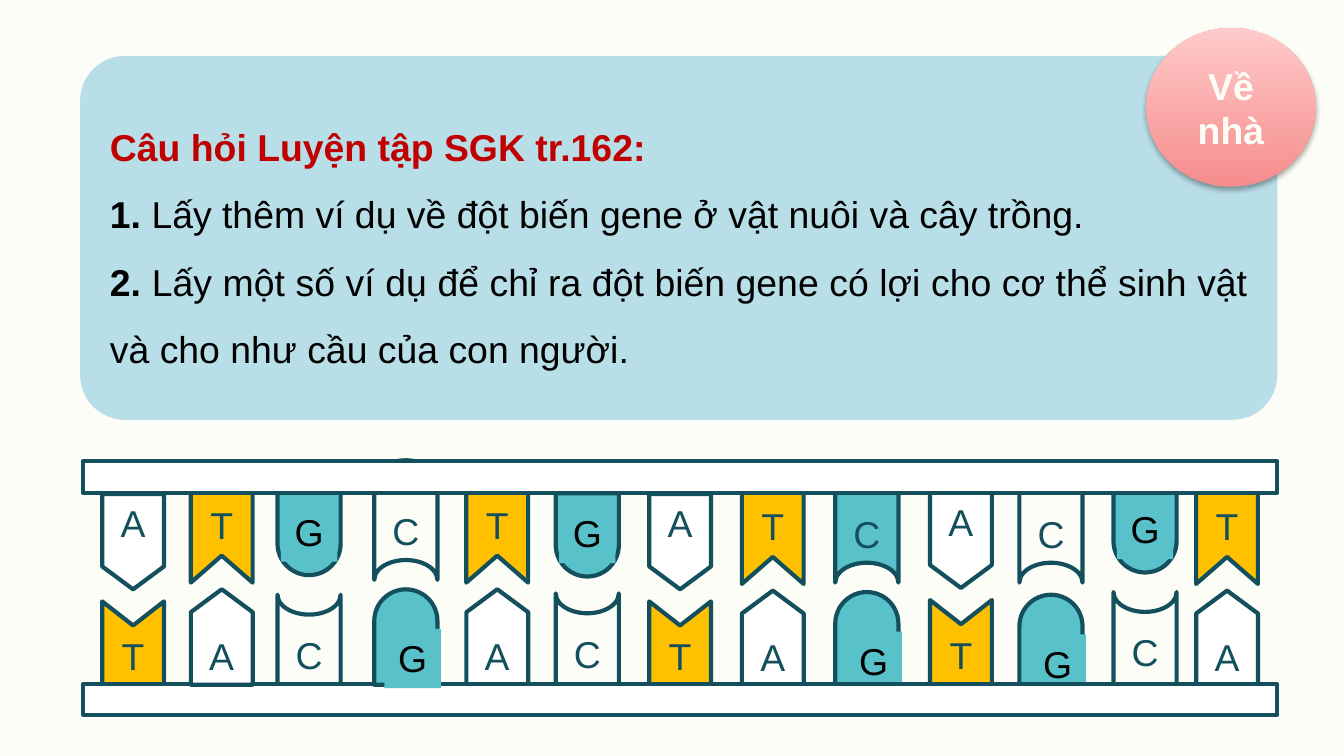
from lxml import etree
from pptx import Presentation
from pptx.dml.color import RGBColor
from pptx.enum.shapes import MSO_SHAPE as Preset
from pptx.enum.text import MSO_ANCHOR as Anchor, MSO_AUTO_SIZE as AutoSize, PP_ALIGN as Align
from pptx.oxml.ns import nsdecls
from pptx.util import Inches, Pt

COLORS = {
    "page": "FDFDF8", "panel": "B8DEE8", "heading": "C00000", "black": "000000",
    "outline": "134F5C", "white": "FFFFFF", "amber": "FFC000", "teal": "59C1C9",
    "badge_bottom": "F68D8D", "badge_top": "FFCACA",
}
PLATE, CHEVRON = Preset.PENTAGON, Preset.CHEVRON
CUP, ARCH = Preset.FLOWCHART_STORED_DATA, Preset.ROUND_2_SAME_RECTANGLE
TOP_BASES = {
    "A": dict(kind=PLATE, size=(0.71, 0.46), fill="white", adjust=(0.37,), turn=90,
              vert="vert270", anchor=Anchor.TOP),
    "T": dict(kind=CHEVRON, size=(0.87, 0.46), fill="amber", adjust=(0.437,), turn=270,
              vert="vert", anchor=Anchor.MIDDLE),
    "C": dict(kind=CUP, size=(0.89, 0.47), fill="page", turn=90, flip=True,
              vert="vert", anchor=Anchor.BOTTOM),
    "G": dict(kind=ARCH, size=(0.47, 0.62), fill="teal", adjust=(0.5, 0), flip=True,
              tag=(0, -0.01)),
}
BOTTOM_BASES = {
    "A": dict(kind=PLATE, size=(0.71, 0.46), fill="white", adjust=(0.37,), turn=270, flip=True,
              vert="vert270", anchor=Anchor.BOTTOM),
    "T": dict(kind=CHEVRON, size=(0.81, 0.46), fill="amber", adjust=(0.39,), turn=90,
              vert="vert270", anchor=Anchor.MIDDLE),
    "C": dict(kind=CUP, size=(0.89, 0.47), fill="page", turn=270,
              vert="vert", anchor=Anchor.MIDDLE),
    "G": dict(kind=ARCH, size=(0.47, 0.71), fill="teal", adjust=(0.5, 0), tag=(0.05, 0.16)),
}
COLUMNS = (0.37, 1.03, 1.68, 2.4, 3.08, 3.75, 4.44, 5.13, 5.83, 6.53, 7.2, 7.9, 8.51)


def rgb(name):
    """Return the named colour."""
    return RGBColor.from_string(COLORS[name])


def add_box(shapes, kind, box, fill, line=None, width=2.25, adjust=()):
    """Add a flat preset shape in a box of left, top, width and height."""
    shape = shapes.add_shape(kind, *map(Inches, box))
    shape.shadow.inherit = False
    shape.fill.solid()
    shape.fill.fore_color.rgb = rgb(fill)
    if line:
        shape.line.color.rgb = rgb(line)
        shape.line.width = Pt(width)
    else:
        shape.line.fill.background()
    for index, value in enumerate(adjust):
        shape.adjustments[index] = value
    return shape


def set_font(font, color, bold=False):
    """Apply the slide's typeface with a colour and weight."""
    font.name, font.size, font.bold = "Arial", Pt(20), bold
    font.color.rgb = rgb(color)


def write_label(shape, text, color, anchor, bold=False, wrap=True):
    """Write one centred label in a shape."""
    frame = shape.text_frame
    frame.word_wrap, frame.vertical_anchor = wrap, anchor
    para = frame.paragraphs[0]
    para.text, para.alignment = text, Align.CENTER
    set_font(para.font, color, bold)


def add_base(shapes, letter, center, kind, size, fill, adjust=(), turn=0, flip=False,
             vert=None, anchor=None, tag=None):
    """Draw a nucleotide around its centre, with its letter inside or on a tag."""
    (x, y), (width, height) = center, size
    shape = add_box(shapes, kind, (x - width / 2, y - height / 2, width, height),
                    fill, "outline", adjust=adjust)
    shape.rotation = turn
    if flip:
        shape._element.spPr.get_or_add_xfrm().set("flipV", "1")
    if tag:
        label = add_box(shapes, Preset.RECTANGLE,
                        (x + tag[0] - 0.21, y + tag[1] - 0.22, 0.42, 0.44), fill)
        write_label(label, letter, "black", Anchor.TOP, wrap=False)
        label.text_frame.auto_size = AutoSize.SHAPE_TO_FIT_TEXT
    else:
        write_label(shape, letter, "outline", anchor)
        shape.text_frame._txBody.bodyPr.set("vert", vert)


def add_strand(page, box, rail, sequence, drops, styles, tinted=(), raised=()):
    """Draw a strand in its box: a rail given as top and height, and its bases."""
    left, top, width, _ = box
    shapes = page.shapes.add_group_shape().shapes

    def draw(column):
        """Draw the base of one column."""
        letter = sequence[column]
        style = dict(styles[letter])
        if column in tinted:
            style["fill"] = "teal"
        add_base(shapes, letter, (left + COLUMNS[column], top + drops[column]), **style)

    for column in range(len(sequence)):
        if column not in raised:
            draw(column)
    add_box(shapes, Preset.RECTANGLE, (left, top + rail[0], width, rail[1]), "white", "outline")
    for column in raised:
        draw(column)


def add_question(page, box):
    """Draw the rounded panel with the heading and the two questions."""
    left, top, width, height = box
    shapes = page.shapes.add_group_shape().shapes
    add_box(shapes, Preset.ROUNDED_RECTANGLE, box, "panel", "panel", 2, (0.119,))
    text_box = shapes.add_textbox(*map(Inches, (left + 0.11, top + 0.28, width - 0.21, height - 0.56)))
    frame = text_box.text_frame
    frame.word_wrap, frame.auto_size = True, AutoSize.SHAPE_TO_FIT_TEXT
    lines = (
        (("Câu hỏi Luyện tập SGK tr.162:", "heading", True),),
        (("1. ", "black", True),
         ("Lấy thêm ví dụ về đột biến gene ở vật nuôi và cây trồng.", "black", False)),
        (("2. ", "black", True),
         ("Lấy một số ví dụ để chỉ ra đột biến gene có lợi cho cơ thể sinh vật "
          "và cho như cầu của con người.", "black", False)),
    )
    for index, spans in enumerate(lines):
        para = frame.add_paragraph() if index else frame.paragraphs[0]
        para.alignment, para.line_spacing = Align.JUSTIFY, 1.5
        for text, color, bold in spans:
            span = para.add_run()
            span.text = text
            set_font(span.font, color, bold)


def add_badge(page, box):
    """Draw the shaded homework badge."""
    badge = add_box(page.shapes, Preset.OVAL, box, "badge_top")
    badge.fill.gradient()
    badge.fill.gradient_angle = 90
    for stop, position, color in zip(badge.fill.gradient_stops, (0, 1), ("badge_bottom", "badge_top")):
        stop.position, stop.color.rgb = position, rgb(color)
    effects = badge._element.spPr.find("{*}effectLst")
    effects.append(etree.fromstring(
        f'<a:outerShdw {nsdecls("a")} blurRad="{Pt(3.1)}" dist="{Pt(1.8)}" dir="5400000" '
        f'rotWithShape="0"><a:srgbClr val="{COLORS["black"]}"><a:alpha val="35000"/>'
        '</a:srgbClr></a:outerShdw>'))
    write_label(badge, "Về nhà", "page", Anchor.MIDDLE, bold=True)


def main():
    """Build and save the slide."""
    deck = Presentation()
    deck.slide_width = Inches(10)
    deck.slide_height = deck.slide_width * 9 // 16
    page = deck.slides.add_slide(deck.slide_layouts[6])
    page.background.fill.solid()
    page.background.fill.fore_color.rgb = rgb("page")
    add_question(page, (0.61, 0.43, 8.88, 2.68))
    add_strand(page, (0.62, 3.43, 8.88, 0.95), (0, 0.24), "ATGCTGATCACGT",
               (0.6, 0.47, 0.54, 0.44, 0.47, 0.55, 0.6, 0.48, 0.46, 0.59, 0.46, 0.52, 0.48),
               TOP_BASES, tinted=(8,))
    add_strand(page, (0.62, 4.38, 8.88, 0.94), (0.71, 0.23), "TACGACTAGTGCA",
               (0.5, 0.36, 0.49, 0.36, 0.36, 0.48, 0.5, 0.37, 0.38, 0.49, 0.4, 0.47, 0.37),
               BOTTOM_BASES, raised=(1, 3))
    add_badge(page, (8.53, 0.21, 1.26, 1.18))
    deck.save("out.pptx")


if __name__ == "__main__":
    main()
